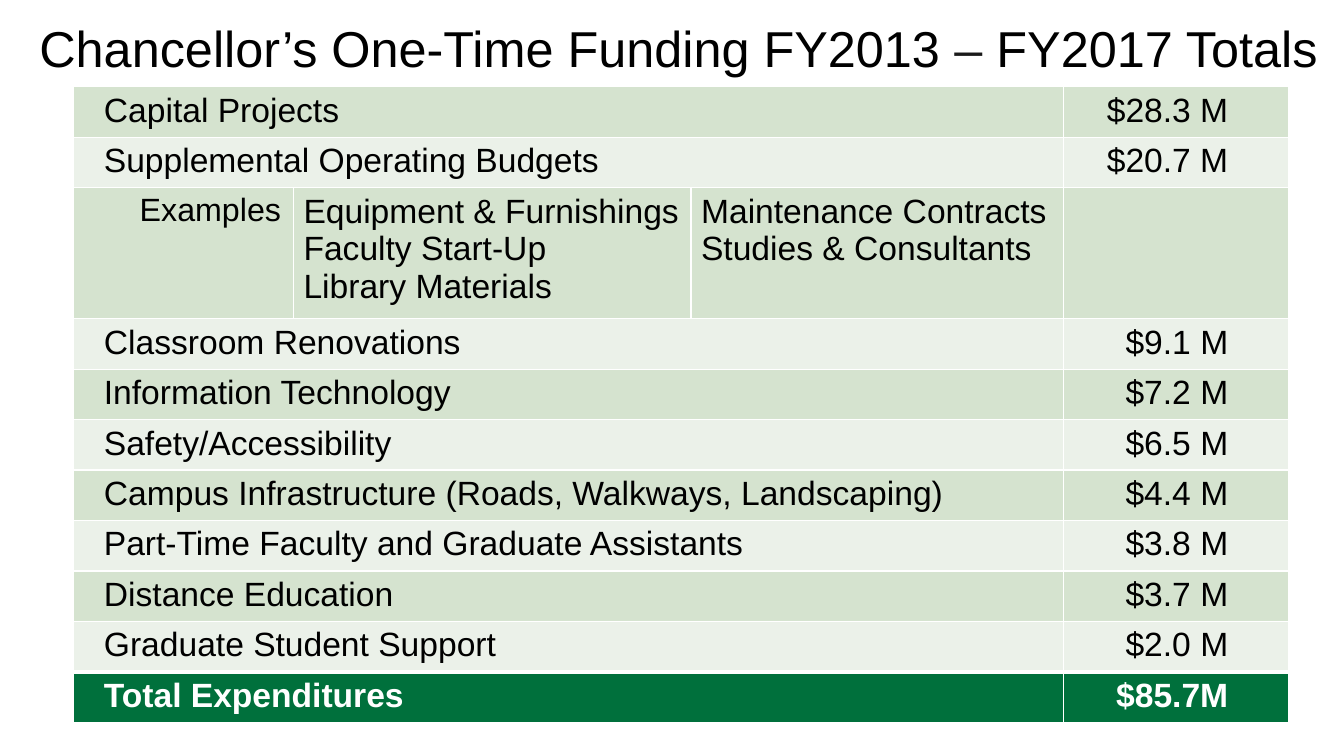
from lxml import etree
from pptx import Presentation
from pptx import util as u
from pptx.dml.color import RGBColor
from pptx.enum import text
from pptx.oxml import ns

LEFT, RIGHT = text.PP_ALIGN.LEFT, text.PP_ALIGN.RIGHT
BLACK, WHITE, GREEN = "000000", "FFFFFF", "00703C"
BANDS = ["D5E3CF", "EBF1E9"]


def tint(code):
    return RGBColor.from_string(code)


class Deck:
    """Holds the text style and the current slide."""

    base = {"name": "Arial", "size": u.Pt(24), "bold": False}

    def __init__(self, slide):
        self.slide = slide

    def run(self, para, words, color=BLACK, **form):
        run = para.add_run()
        run.text = words
        for key, val in {**self.base, **form}.items():
            setattr(run.font, key, val)
        run.font.color.rgb = tint(color)

    def title(self, box, parts, size):
        frame = self.slide.shapes.add_textbox(*map(u.Pt, box)).text_frame
        frame.word_wrap = True
        frame.vertical_anchor = text.MSO_ANCHOR.MIDDLE
        para = frame.paragraphs[0]
        para.line_spacing = 0.9
        for words, color in parts:
            self.run(para, words, color, size=u.Pt(size))

    def table(self, left, top, cols, rows):
        box = map(u.Pt, (left, top, sum(cols), sum(rows)))
        table = self.slide.shapes.add_table(len(rows), len(cols), *box).table
        table.first_row = table.horz_banding = False
        for col, width in zip(table.columns, cols):
            col.width = u.Pt(width)
        for row, height in zip(table.rows, rows):
            row.height = u.Pt(height)
        return table

    def edges(self, cell, top):
        props = cell._tc.get_or_add_tcPr()
        for pos, side in enumerate("LRTB"):
            width = u.Pt(top if side == "T" else 1)
            line = etree.Element(ns.qn(f"a:ln{side}"), w=str(width))
            fill = etree.SubElement(line, ns.qn("a:solidFill"))
            etree.SubElement(fill, ns.qn("a:srgbClr"), val=WHITE)
            props.insert(pos, line)

    def paint(self, row, fill, top=1):
        for cell in row.cells:
            cell.fill.solid()
            cell.fill.fore_color.rgb = tint(fill)
            self.edges(cell, top)

    def cell(self, cell, lines, left=7.2, right=7.2, align=LEFT, **form):
        cell.margin_left, cell.margin_right = u.Pt(left), u.Pt(right)
        frame = cell.text_frame
        for num, words in enumerate(lines):
            para = frame.add_paragraph() if num else frame.paragraphs[0]
            para.alignment = align
            self.run(para, words, **form)


ITEMS = [
    ("Capital Projects", "$28.3 M"),
    ("Supplemental Operating Budgets", "$20.7 M"),
    None,  # row of examples
    ("Classroom Renovations", "$9.1 M"),
    ("Information Technology", "$7.2 M"),
    ("Safety/Accessibility", "$6.5 M"),
    ("Campus Infrastructure (Roads, Walkways, Landscaping)", "$4.4 M"),
    ("Part-Time Faculty and Graduate Assistants", "$3.8 M"),
    ("Distance Education", "$3.7 M"),
    ("Graduate Student Support", "$2.0 M"),
    ("Total Expenditures", "$85.7M"),
]
GOODS = ["Equipment & Furnishings", "Faculty Start-Up", "Library Materials"]
WORK = ["Maintenance Contracts", "Studies & Consultants"]


def main():
    prs = Presentation()
    prs.slide_width, prs.slide_height = u.Pt(960), u.Pt(540)
    deck = Deck(prs.slides.add_slide(prs.slide_layouts[6]))

    # Title
    deck.title((21, 0, 932, 73), [
        ("Chancellor’s One-Time Funding FY2013", BLACK),
        (" – ", "1A1A1A"),
        ("FY2017 Totals", BLACK),
    ], 36)

    # Funding table
    rows = [33.1 if item else 93.6 for item in ITEMS]
    table = deck.table(52.6, 62, [157, 284, 266, 161], rows)
    last = len(ITEMS) - 1
    for num, item in enumerate(ITEMS):
        total = num == last
        deck.paint(table.rows[num], GREEN if total else BANDS[num % 2],
                   3 if total else 1)
        cells = [table.cell(num, col) for col in range(4)]
        if item:
            name, sum_ = item
            form = {"color": WHITE, "bold": True} if total else {}
            cells[0].merge(cells[2])
            deck.cell(cells[0], [name], left=21.6, **form)
            deck.cell(cells[3], [sum_], 28.8, 43.2, RIGHT, **form)
        else:
            deck.cell(cells[0], ["Examples"], 47.2, 0, size=u.Pt(23))
            deck.cell(cells[1], GOODS)
            deck.cell(cells[2], WORK)

    prs.save("out.pptx")


if __name__ == "__main__":
    main()
